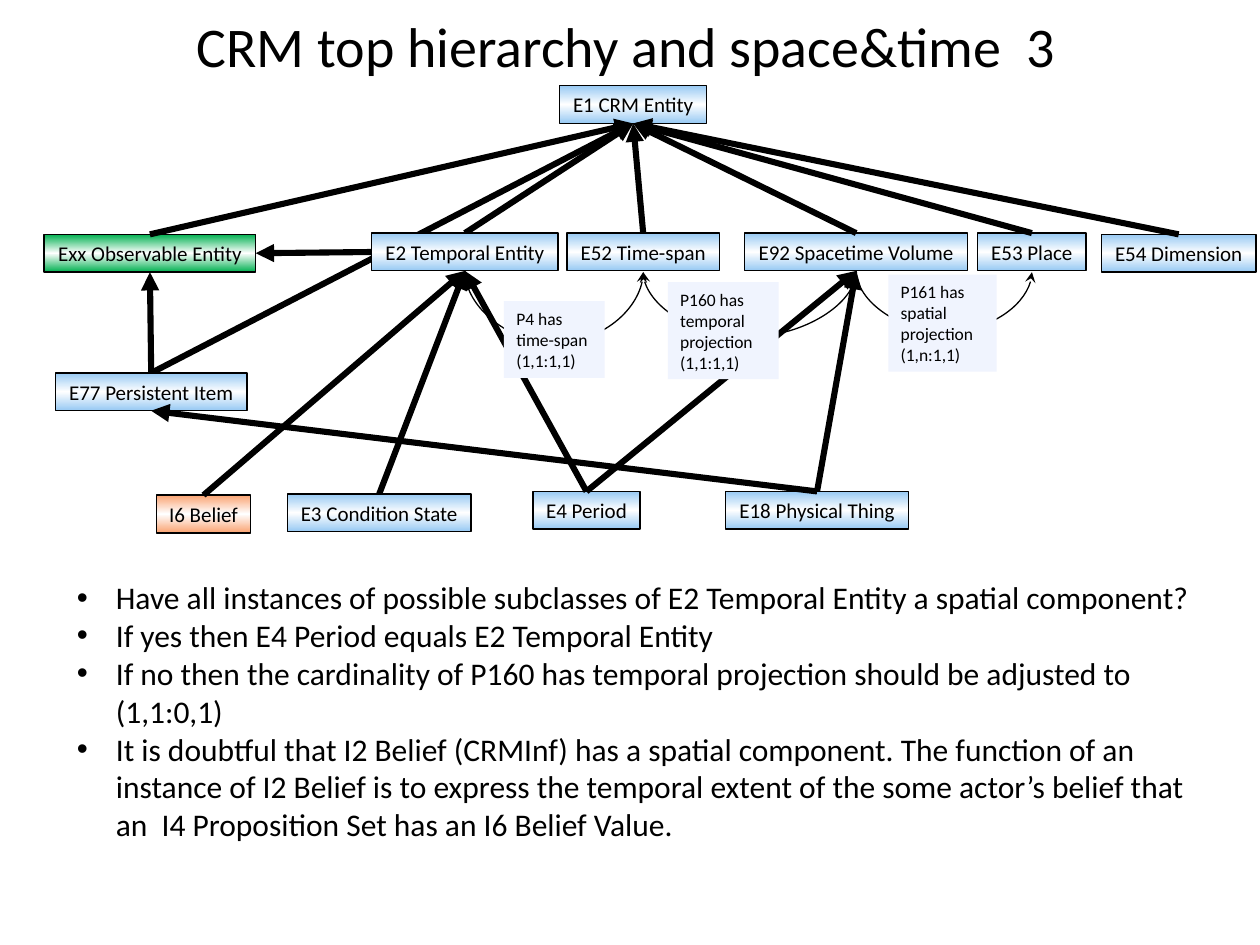
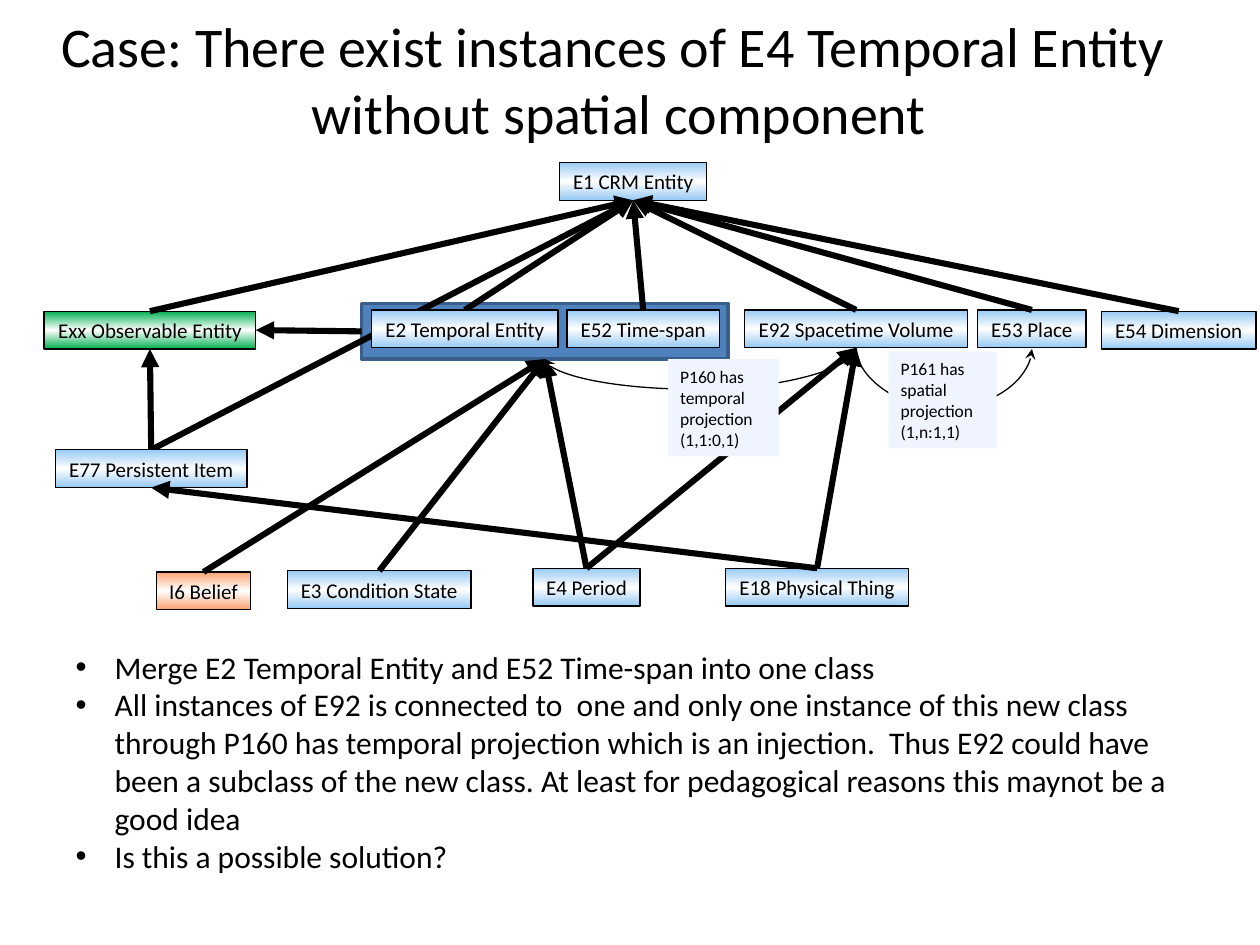
"""Build two slides of the CRM class hierarchy with its space and time links."""
import copy

import pptx
import pptx.dml.color
import pptx.enum.shapes
import pptx.enum.text
import pptx.oxml.ns
import pptx.oxml.xmlchemy
import pptx.util
from lxml import etree

RGB = pptx.dml.color.RGBColor
ALIGN = pptx.enum.text.PP_ALIGN
ANCHOR = pptx.enum.text.MSO_ANCHOR
CONNECTOR = pptx.enum.shapes.MSO_CONNECTOR
RECTANGLE = pptx.enum.shapes.MSO_SHAPE.RECTANGLE
qn = pptx.oxml.ns.qn

BLACK = RGB(0x00, 0x00, 0x00)
WHITE = RGB(0xFF, 0xFF, 0xFF)
SKY = RGB(0x97, 0xC9, 0xF3)
GREEN = RGB(0x00, 0xB0, 0x50)
ORANGE = RGB(0xFA, 0xA3, 0x72)
PALE = RGB(0xF0, 0xF4, 0xFE)
BAND = RGB(0x4F, 0x81, 0xBD)
BAND_EDGE = RGB(0x3A, 0x5F, 0x8C)

FONT = "Calibri"
EMU_PER_PX = 9144
BOX_HEIGHT = 30
BULLET_INDENT = 31

CLASSES = {
    "E1": ("E1 CRM Entity", 444, 68, 117, SKY),
    "Exx": ("Exx Observable Entity", 35, 186, 168, GREEN),
    "E2": ("E2 Temporal Entity", 295, 185, 148, SKY),
    "E52": ("E52 Time-span", 450, 185, 121, SKY),
    "E92": ("E92 Spacetime Volume", 591, 185, 177, SKY),
    "E53": ("E53 Place", 776, 185, 86, SKY),
    "E54": ("E54 Dimension", 874, 186, 123, SKY),
    "E77": ("E77 Persistent Item", 44, 296, 152, SKY),
    "I6": ("I6 Belief", 124, 393, 75, ORANGE),
    "E3": ("E3 Condition State", 228, 392, 146, SKY),
    "E4": ("E4 Period", 423, 390, 85, SKY),
    "E18": ("E18 Physical Thing", 576, 390, 145, SKY),
}
LINKS_BEHIND = [("E2", "E1"), ("E77", "E1")]
LINKS = [
    ("Exx", "E1"), ("E52", "E1"), ("E92", "E1"), ("E53", "E1"), ("E54", "E1"),
    ("E77", "Exx"), ("E18", "E77"), ("E4", "E92"), ("E18", "E92"),
]
TEMPORAL_SUBCLASSES = ["I6", "E3", "E4"]
P161_CURVE = ("E92", "E53", 49)
P161_NOTE = (["P161 has", "spatial projection", "(1,n:1,1)"], 705, 218, 86, 77)

SLIDES = [
    {
        "title": ["CRM top hierarchy and space&time  3"],
        "title_at": (146, 4, 709, 64),
        "title_align": ALIGN.LEFT,
        "shift": 0,
        "band": None,
        "curves": [("E92", "E52", 53), ("E2", "E52", 58), P161_CURVE],
        "notes": [
            (["P4 has", "time-span", "(1,1:1,1)"], 400, 239, 80, 61),
            P161_NOTE,
            (["P160 has", "temporal projection", "(1,1:1,1)"], 530, 224, 88, 77),
        ],
        "bullets": [
            "Have all instances of possible subclasses of E2 Temporal Entity a spatial component?",
            "If yes then E4 Period equals E2 Temporal Entity",
            "If no then the cardinality of P160 has temporal projection should be adjusted to (1,1:0,1)",
            "It is doubtful that I2 Belief (CRMInf) has a spatial component. The function of an "
            "instance of I2 Belief is to express the temporal extent of the some actor’s belief "
            "that an  I4 Proposition Set has an I6 Belief Value.",
        ],
        "bullets_at": (51, 454, 906, 222),
    },
    {
        "title": ["Case: There exist instances of E4 Temporal Entity ", "without spatial component"],
        "title_at": (34, 4, 915, 118),
        "title_align": ALIGN.CENTER,
        "shift": 61,
        "band": (287, 241, 291, 44),
        "curves": [("E92", "band", 33), P161_CURVE],
        "notes": [
            P161_NOTE,
            (["P160 has", "temporal projection", "(1,1:0,1)"], 530, 224, 88, 77),
        ],
        "bullets": [
            "Merge E2 Temporal Entity and E52 Time-span into one class",
            "All instances of E92 is connected to  one and only one instance of this new class "
            "through P160 has temporal projection which is an injection.  Thus E92 could have "
            "been a subclass of the new class. At least for pedagogical reasons this maynot be "
            "a good idea",
            "Is this a possible solution?",
        ],
        "bullets_at": (50, 509, 906, 192),
    },
]


def px(length):
    return pptx.util.Emu(round(length * EMU_PER_PX))


def place(shape, at):
    shape.left, shape.top, shape.width, shape.height = map(px, at)


def write(frame, lines, size, align=ALIGN.LEFT, anchor=ANCHOR.TOP, wrap=True, indent=0):
    frame.auto_size = pptx.enum.text.MSO_AUTO_SIZE.NONE
    frame.word_wrap = wrap
    frame.vertical_anchor = anchor
    for index, line in enumerate(lines):
        para = frame.add_paragraph() if index else frame.paragraphs[0]
        para.alignment = align
        para.space_before = pptx.util.Pt(0)
        if indent:
            properties = para._p.get_or_add_pPr()
            properties.set("marL", str(px(indent)))
            properties.set("indent", str(-px(indent)))
        span = para.add_run()
        span.text = line
        span.font.name = FONT
        span.font.size = pptx.util.Pt(size)
        span.font.color.rgb = BLACK


def add_rectangle(page, at, fill=None, edge=None, edge_width=0.75):
    box = page.shapes.add_shape(RECTANGLE, *map(px, at))
    box.shadow.inherit = False
    if fill is not None:
        box.fill.solid()
        box.fill.fore_color.rgb = fill
    if edge is None:
        box.line.fill.background()
    else:
        box.line.color.rgb = edge
        box.line.width = pptx.util.Pt(edge_width)
    return box


def add_class(page, name, at, color):
    box = add_rectangle(page, at, edge=BLACK)
    box.fill.gradient()
    box.fill.gradient_angle = 90
    stop_list = box.element.spPr.find(qn("a:gradFill")).find(qn("a:gsLst"))
    stop_list.append(copy.deepcopy(stop_list[0]))
    for stop, position, tint in zip(box.fill.gradient_stops, (0, 0.5, 1), (color, WHITE, color)):
        stop.position = position
        stop.color.rgb = tint
    write(box.text_frame, [name], 12, align=ALIGN.CENTER, anchor=ANCHOR.MIDDLE, wrap=False)


def add_arrow(page, kind, start, end, width, head):
    arrow = page.shapes.add_connector(kind, *map(px, start + end))
    arrow.line.color.rgb = BLACK
    arrow.line.width = pptx.util.Pt(width)
    etree.SubElement(arrow.line._get_or_add_ln(), qn("a:tailEnd"), type=head)
    etree.SubElement(arrow.element.spPr, qn("a:effectLst"))
    return arrow


def add_link(page, start, end):
    add_arrow(page, CONNECTOR.STRAIGHT, start, end, 3.5, "triangle")


def add_curve(page, start, end, depth):
    """Draw a curve that hangs below both ends, as a turned curved connector."""
    span, drop = abs(end[0] - start[0]), max(end[1] - start[1], 1)
    middle_x, middle_y = (start[0] + end[0]) / 2, start[1] + drop / 2
    corner = (middle_x - drop / 2, middle_y - span / 2)
    opposite = (middle_x + drop / 2, middle_y + span / 2)
    curve = add_arrow(page, CONNECTOR.CURVE, corner, opposite, 0.75, "stealth")
    properties = curve.element.spPr
    frame = properties.find(qn("a:xfrm"))
    if end[0] > start[0]:
        frame.set("rot", "16200000")
        frame.set("flipH", "1")
    else:
        frame.set("rot", "5400000")
    geometry = properties.find(qn("a:prstGeom"))
    adjustments = geometry.find(qn("a:avLst"))
    if adjustments is None:
        adjustments = etree.SubElement(geometry, qn("a:avLst"))
    etree.SubElement(adjustments, qn("a:gd"), name="adj1", fmla=f"val {round(depth / drop * 100000)}")


def top(at):
    return at[0] + at[2] / 2, at[1]


def bottom(at):
    return at[0] + at[2] / 2, at[1] + at[3]


def left(at):
    return at[0], at[1] + at[3] / 2


def right(at):
    return at[0] + at[2], at[1] + at[3] / 2


def add_hierarchy(page, content):
    shift = content["shift"]
    spots = {key: (x, y + shift, width, BOX_HEIGHT) for key, (_, x, y, width, _) in CLASSES.items()}
    temporal = "E2"
    if content["band"]:
        temporal = "band"
        spots["band"] = content["band"]
        add_rectangle(page, content["band"], fill=BAND, edge=BAND_EDGE, edge_width=2)
    for source, target, depth in content["curves"]:
        start, end = bottom(spots[source]), bottom(spots[target])
        add_curve(page, start, (end[0], max(end[1], start[1] + 1)), depth)
    for child, parent in LINKS_BEHIND:
        add_link(page, top(spots[child]), bottom(spots[parent]))
    for key, (name, _, _, _, color) in CLASSES.items():
        add_class(page, name, spots[key], color)
    for child, parent in LINKS + [(child, temporal) for child in TEMPORAL_SUBCLASSES]:
        add_link(page, top(spots[child]), bottom(spots[parent]))
    add_link(page, left(spots[temporal]), right(spots["Exx"]))
    for lines, x, y, width, height in content["notes"]:
        note = add_rectangle(page, (x, y + shift, width, height), fill=PALE)
        write(note.text_frame, lines, 10, anchor=ANCHOR.MIDDLE)


def add_page(deck, content):
    page = deck.slides.add_slide(deck.slide_layouts[1])
    title, body = page.shapes.title, page.placeholders[1]
    place(title, content["title_at"])
    write(title.text_frame, content["title"], 32, align=content["title_align"], wrap=False)
    place(body, content["bullets_at"])
    write(body.text_frame, content["bullets"], 18, indent=BULLET_INDENT)
    add_hierarchy(page, content)


def main():
    deck = pptx.Presentation()
    deck.slide_width, deck.slide_height = px(1000), px(750)
    for content in SLIDES:
        add_page(deck, content)
    deck.save("out.pptx")


if __name__ == "__main__":
    main()
